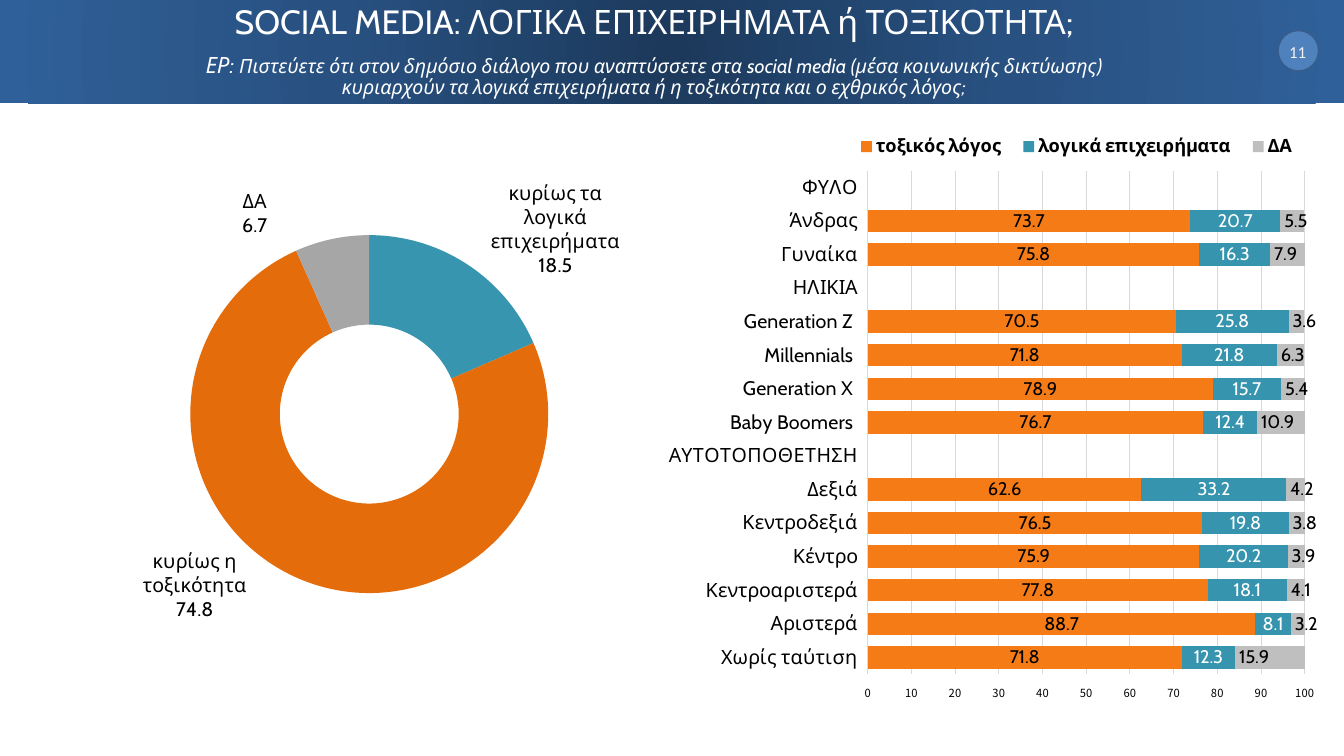
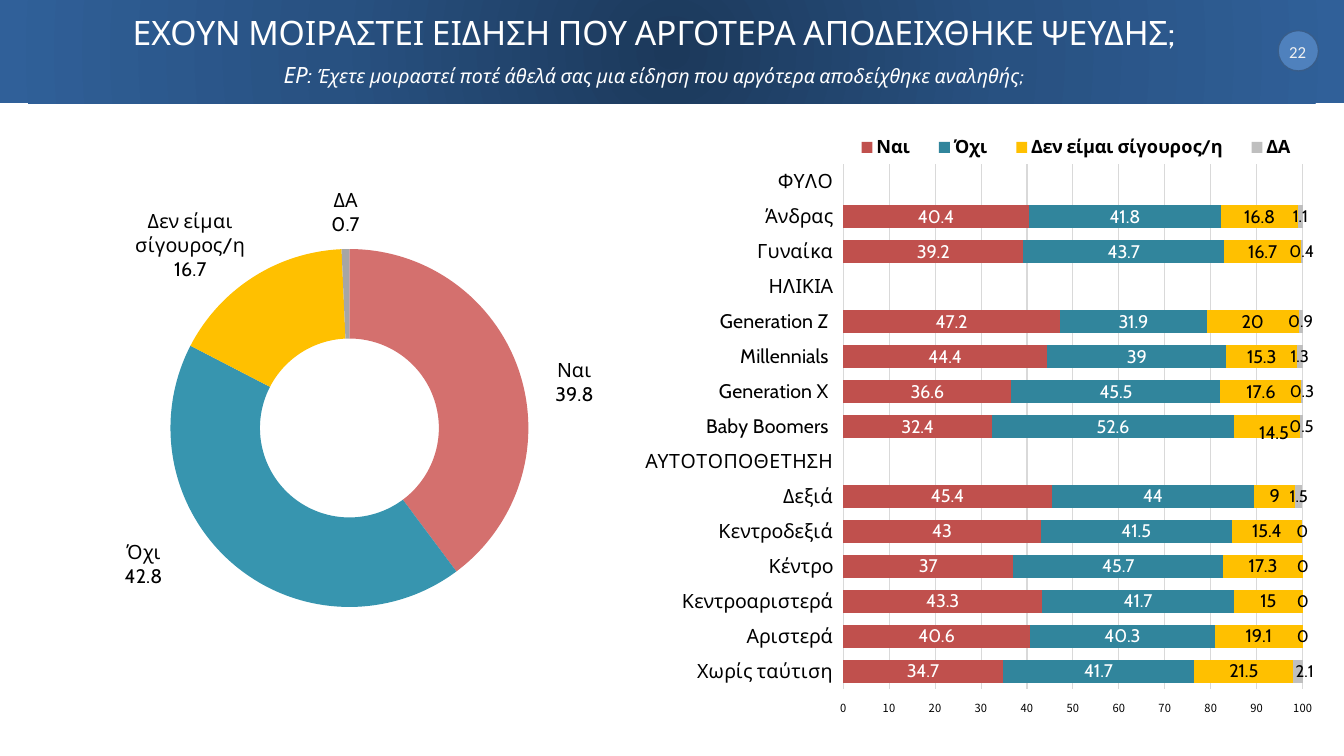
"""Build two survey slides, each with a ring chart and a stacked bar chart."""
import math
import pptx
import pptx.chart.data
import pptx.dml.color
import pptx.enum.chart
import pptx.enum.shapes
import pptx.enum.text
import pptx.oxml
import pptx.oxml.ns
import pptx.util

Cm, Pt = pptx.util.Cm, pptx.util.Pt
KIND = pptx.enum.chart.XL_CHART_TYPE
SPOT = pptx.enum.chart.XL_LABEL_POSITION
MARK = pptx.enum.chart.XL_TICK_MARK
TICK = pptx.enum.chart.XL_TICK_LABEL_POSITION
FORM = pptx.enum.shapes.MSO_SHAPE
FACE, WIDE, BODY = "Cabin", "Noto Sans CJK TC", "Calibri"
BLACK, WHITE, GRID, GREY = "000000", "FFFFFF", "D9D9D9", "BFBFBF"
FADE = [(0, "1C395B"), (50, "285181"), (100, "306099")]
SIZE = (33.87, 19.05)
BAND = (0, 0, 33.87, 2.6)
DISC = (32.21, 0.77, 1.02, 1.02)
HEAD = (0.73, 0.2, 31.5, 2.24)
PAGE = (31.53, 0.17, 2.34, 2.29)
RING = (0.284, 0.163, 0.441, 0.695)
ROWS = ["ΦΥΛΟ", "Άνδρας", "Γυναίκα", "ΗΛΙΚΙΑ", "Generation Z ", "Millennials ",
        "Generation X ", "Baby Boomers ", "ΑΥΤΟΤΟΠΟΘΕΤΗΣΗ", "Δεξιά",
        "Κεντροδεξιά", "Κέντρο", "Κεντροαριστερά", "Αριστερά", "Χωρίς ταύτιση"]
GAPS = (0, 3, 8)

SLIDES = [
    {"page": "11",
     "title": "SOCIAL MEDIA: ΛΟΓΙΚΑ ΕΠΙΧΕΙΡΗΜΑΤΑ ή ΤΟΞΙΚΟΤΗΤΑ;",
     "ask": ["Πιστεύετε ότι στον δημόσιο διάλογο που αναπτύσσετε στα social media "
             "(μέσα κοινωνικής δικτύωσης)",
             "κυριαρχούν τα λογικά επιχειρήματα ή η τοξικότητα και ο εχθρικός λόγος;"],
     "ring": (-1.02, 3.81, 20.47, 12.98),
     "parts": [("κυρίως τα λογικά επιχειρήματα", 18.5, "3795AF", (14, 5.79)),
               ("κυρίως η τοξικότητα", 74.8, "E46C0A", (4.91, 14.76)),
               ("ΔΑ", 6.7, "A6A6A6", (6.42, 5.39))],
     "bars": (16, 2.84, 17.68, 14.91),
     "key": (21.28, 3.32, 11.7, 0.75),
     "plot": (0.332, 0.098, 0.623, 0.851),
     "rows": [
         ("τοξικός λόγος", "F57B17", BLACK, 13, SPOT.CENTER, {},
          [73.7, 75.8, 70.5, 71.8, 78.9, 76.7, 62.6, 76.5, 75.9, 77.8, 88.7, 71.8]),
         ("λογικά επιχειρήματα", "3794AE", WHITE, 13, SPOT.CENTER, {},
          [20.7, 16.3, 25.8, 21.8, 15.7, 12.4, 33.2, 19.8, 20.2, 18.1, 8.1, 12.3]),
         ("ΔΑ", GREY, BLACK, 13, SPOT.INSIDE_BASE, {},
          [5.5, 7.9, 3.6, 6.3, 5.4, 10.9, 4.2, 3.8, 3.9, 4.1, 3.2, 15.9])]},
    {"page": "22",
     "title": "ΕΧΟΥΝ ΜΟΙΡΑΣΤΕΙ ΕΙΔΗΣΗ ΠΟΥ ΑΡΓΟΤΕΡΑ ΑΠΟΔΕΙΧΘΗΚΕ ΨΕΥΔΗΣ;",
     "ask": ["Έχετε μοιραστεί ποτέ άθελά σας μια είδηση που αργότερα "
             "αποδείχθηκε αναληθής;"],
     "ring": (-1.52, 4.16, 20.47, 12.98),
     "parts": [("Ναι", 39.8, "D4706E", (14.48, 9.65)),
               ("Όχι", 42.8, "3795AF", (3.62, 14.23)),
               ("Δεν είμαι σίγουρος/η", 16.7, "FFC000", (4.8, 6.19)),
               ("ΔΑ", 0.7, "A6A6A6", (8.71, 5.36))],
     "bars": (16.26, 2.9, 17.35, 15.52),
     "key": (21.07, 3.34, 12.03, 0.75),
     "plot": (0.284, 0.08, 0.671, 0.852),
     "rows": [
         ("Ναι", "C0504D", WHITE, 13, SPOT.CENTER, {},
          [40.4, 39.2, 47.2, 44.4, 36.6, 32.4, 45.4, 43, 37, 43.3, 40.6, 34.7]),
         ("Όχι", "31859C", WHITE, 13, SPOT.CENTER, {},
          [41.8, 43.7, 31.9, 39, 45.5, 52.6, 44, 41.5, 45.7, 41.7, 40.3, 41.7]),
         ("Δεν είμαι σίγουρος/η", "FFC000", BLACK, 13, SPOT.CENTER, {7: (0.01, 0.01)},
          [16.8, 16.7, 20, 15.3, 17.6, 14.5, 9, 15.4, 17.3, 15, 19.1, 21.5]),
         ("ΔΑ", GREY, BLACK, 12, SPOT.CENTER, {14: (0.01, 0)},
          [1.1, 0.4, 0.9, 1.3, 0.3, 0.5, 1.5, 0, 0, 0, 0, 2.1])]},
]


def tint(code):
    """Return the colour for a hex string."""
    return pptx.dml.color.RGBColor.from_string(code)


def box(area):
    """Return an area in centimetres as lengths."""
    return [Cm(side) for side in area]


def paint(form, code):
    """Give a shape, bar or slice a plain fill."""
    form.fill.solid()
    form.fill.fore_color.rgb = tint(code)


def ink(font, size, code=BLACK, face=FACE, bold=False):
    """Set size, colour, face and weight of a font."""
    font.size, font.name, font.bold = Pt(size), face, bold
    font.color.rgb = tint(code)


def node(text):
    """Make an XML element with the chart and drawing prefixes."""
    names = pptx.oxml.ns.nsdecls("a", "c")
    return pptx.oxml.parse_xml(f"<a:root {names}>{text}</a:root>")[0]


def fix(part, slot, spots, inner=False):
    """Put a manual layout into a chart part: two numbers shift, four place."""
    old = part.find(pptx.oxml.ns.qn("c:layout"))
    if old is not None:
        part.remove(old)
    tags = ['<c:layoutTarget val="inner"/>'] if inner else []
    if len(spots) == 4:
        tags += ['<c:xMode val="edge"/>', '<c:yMode val="edge"/>']
    tags += [f'<c:{side} val="{spot:.4f}"/>' for side, spot in zip("xywh", spots)]
    part.insert(slot, node("<c:layout><c:manualLayout>" + "".join(tags)
                           + "</c:manualLayout></c:layout>"))


def shift(row, spot, move, size, code):
    """Move one data label by fractions of the chart and return its element."""
    ink(row.points[spot].data_label.font, size, code)
    tag = row.data_labels._element.xpath(f'c:dLbl[c:idx/@val="{spot}"]')[0]
    fix(tag, 1, move)
    return tag


def split(tag):
    """Show category over value in a label element."""
    tag.xpath("c:showCatName")[0].set("val", "1")
    tag.xpath("c:showBubbleSize")[0].addnext(node("<c:separator>\n</c:separator>"))


def plot(slide, kind, area, names, rows, space):
    """Add a chart with a fixed plot area."""
    data = pptx.chart.data.CategoryChartData()
    data.categories = names
    for name, vals in rows:
        data.add_series(name, vals)
    chart = slide.shapes.add_chart(kind, *box(area), data).chart
    chart.has_title = chart.has_legend = False
    fix(chart._chartSpace.xpath("c:chart/c:plotArea")[0], 0, space, True)
    return chart


def ring(slide, area, parts):
    """Add the ring chart, its labels centred on the given points."""
    names, vals, codes, goals = zip(*parts)
    chart = plot(slide, KIND.DOUGHNUT, area, names, [("Series 1", vals)], RING)
    ink(chart.font, 10, face=BODY)
    row = chart.plots[0].series[0]
    left, top, wide, high = area
    mid = left + wide * (RING[0] + RING[2] / 2), top + high * (RING[1] + RING[3] / 2)
    reach = 0.75 * min(wide * RING[2], high * RING[3]) / 2
    ink(row.data_labels.font, 14)
    for spot, (code, goal) in enumerate(zip(codes, goals)):
        paint(row.points[spot].format, code)
        turn = 2 * math.pi * (sum(vals[:spot]) + vals[spot] / 2) / sum(vals)
        move = ((goal[0] - mid[0] - reach * math.sin(turn)) / wide,
                (goal[1] - mid[1] + reach * math.cos(turn)) / high)
        split(shift(row, spot, move, 14, BLACK))
    tags = row.data_labels._element
    split(tags)
    for line in tags.xpath("c:showLeaderLines"):
        line.set("val", "0")


def bars(slide, area, rows, space, spot):
    """Add the stacked bar chart with its legend on top."""
    full = []
    for row in rows:
        vals = iter(row[-1])
        full.append((row[0], [None if item in GAPS else next(vals)
                              for item in range(len(ROWS))]))
    chart = plot(slide, KIND.BAR_STACKED, area, ROWS, full, space)
    ink(chart.font, 11, face=WIDE)
    body = chart.plots[0]
    body.gap_width, body.overlap, body.vary_by_categories = 50, 100, False
    for row, (_, code, text, size, place, moves, _) in zip(body.series, rows):
        paint(row.format, code)
        tags = row.data_labels
        tags.show_value, tags.position = True, place
        ink(tags.font, size, text)
        for item, move in moves.items():
            shift(row, item, move, size, text)
    names, scale = chart.category_axis, chart.value_axis
    for axis, size, face, side in ((names, 14, FACE, TICK.LOW),
                                   (scale, 8, WIDE, TICK.HIGH)):
        axis.major_tick_mark = axis.minor_tick_mark = MARK.NONE
        axis.tick_label_position = side
        ink(axis.tick_labels.font, size, face=face)
    names.reverse_order = True
    scale.minimum_scale, scale.maximum_scale, scale.major_unit = 0, 100, 10
    scale.format.line.fill.background()
    for line in (names.format.line, scale.major_gridlines.format.line):
        line.color.rgb, line.width = tint(GRID), Pt(0.75)
    chart.has_legend = True
    key = chart.legend
    key.position = pptx.enum.chart.XL_LEGEND_POSITION.BOTTOM
    key.include_in_layout = False
    ink(key.font, 13, bold=True)
    left, top, wide, high = area
    fix(key._element, 1, ((spot[0] - left) / wide, (spot[1] - top) / high,
                          spot[2] / wide, spot[3] / high))


def base(deck, layout):
    """Put the band and the page disc on the layout."""
    slide = deck.slides[0]
    band = slide.shapes.add_shape(FORM.RECTANGLE, *box(BAND))
    disc = slide.shapes.add_shape(FORM.OVAL, *box(DISC))
    band.line.fill.background()
    band.fill.background()
    stops = "".join(f'<a:gs pos="{pos * 1000}"><a:srgbClr val="{code}"/></a:gs>'
                    for pos, code in FADE)
    old = band.element.spPr.find(pptx.oxml.ns.qn("a:noFill"))
    band.element.spPr.replace(old, node(
        f'<a:gradFill><a:gsLst>{stops}</a:gsLst><a:path path="circle">'
        '<a:fillToRect l="50000" t="50000" r="50000" b="50000"/></a:path></a:gradFill>'))
    paint(disc, "4F81BD")
    disc.line.color.rgb, disc.line.width = tint("385D8A"), Pt(1)
    for slot, shape in enumerate((band, disc), 2):
        shape.shadow.inherit = False
        layout.shapes.element.insert(slot, shape.element)


def frame(shape):
    """Centre the text of a shape and return its text frame."""
    text = shape.text_frame
    text.word_wrap = True
    text.auto_size = pptx.enum.text.MSO_AUTO_SIZE.NONE
    text.vertical_anchor = pptx.enum.text.MSO_ANCHOR.MIDDLE
    text.paragraphs[0].alignment = pptx.enum.text.PP_ALIGN.CENTER
    return text


def head(slide, title, ask, page):
    """Write the title, the question under it and the page number."""
    shape = slide.shapes.title
    shape.left, shape.top, shape.width, shape.height = box(HEAD)
    text = frame(shape)
    first, second = text.paragraphs[0], text.add_paragraph()
    first.text = title
    second.alignment = first.alignment
    first.line_spacing = second.line_spacing = 0.9
    first.space_before, second.space_before = Pt(0), Pt(8.5)
    ink(first.font, 24, WHITE)
    ink(second.font, 14, WHITE)
    second.font.italic = True
    mark = second.add_run()
    mark.text, mark.font.size = "ΕΡ: ", Pt(16)
    for spot, line in enumerate(ask):
        if spot:
            second.add_line_break()
        second.add_run().text = line
    count = frame(slide.shapes.add_textbox(*box(PAGE))).paragraphs[0]
    count.text = page
    ink(count.font, 12, "F2F2F2", BODY)


def main():
    """Build and save the deck."""
    deck = pptx.Presentation()
    deck.slide_width, deck.slide_height = box(SIZE)
    layout = deck.slide_layouts[5]
    for item in SLIDES:
        slide = deck.slides.add_slide(layout)
        head(slide, item["title"], item["ask"], item["page"])
        ring(slide, item["ring"], item["parts"])
        bars(slide, item["bars"], item["rows"], item["plot"], item["key"])
    base(deck, layout)
    deck.save("out.pptx")


if __name__ == "__main__":
    main()
